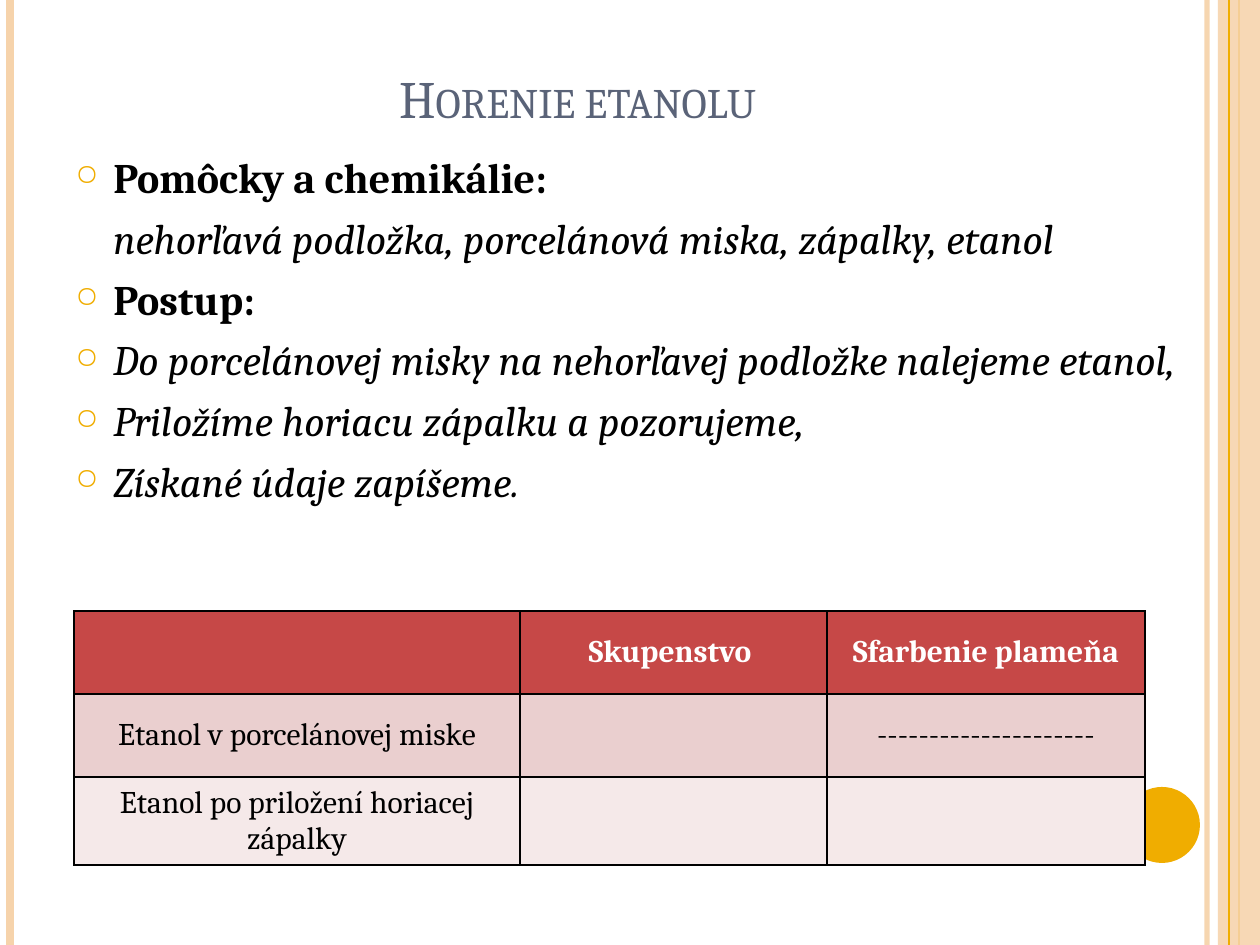
from lxml.etree import SubElement
from pptx import Presentation
from pptx.dml.color import RGBColor
from pptx.enum.shapes import MSO_CONNECTOR, MSO_SHAPE
from pptx.enum.text import MSO_ANCHOR, PP_ALIGN
from pptx.oxml.ns import qn
from pptx.util import Emu, Pt

PX_PER_INCH = 126
WIDTH, HEIGHT = 1260, 945
FONT = "Cambria"

PEACH = RGBColor(0xF6, 0xD3, 0xAB)
AMBER = RGBColor(0xF0, 0xAD, 0x00)
SLATE = RGBColor(0x5A, 0x63, 0x78)
BLACK = RGBColor(0x00, 0x00, 0x00)
WHITE = RGBColor(0xFF, 0xFF, 0xFF)
RED = RGBColor(0xC6, 0x48, 0x47)
ROSE = RGBColor(0xEA, 0xCF, 0xCF)
PALE_ROSE = RGBColor(0xF5, 0xE9, 0xE9)

# Text, bulleted, bold (otherwise italic)
INSTRUCTIONS = [
    ("Pomôcky a chemikálie:", True, True),
    ("nehorľavá podložka, porcelánová miska, zápalky, etanol", False, False),
    ("Postup:", True, True),
    ("Do porcelánovej misky na nehorľavej podložke nalejeme etanol,", True, False),
    ("Priložíme horiacu zápalku a pozorujeme,", True, False),
    ("Získané údaje zapíšeme.", True, False),
]
OBSERVATIONS = [
    ["", "Skupenstvo ", "Sfarbenie plameňa"],
    ["Etanol v porcelánovej miske", "", "---------------------"],
    ["Etanol po priložení horiacej zápalky", "", ""],
]
COLUMN_WIDTHS = [446, 307, 318]
ROW_HEIGHTS = [83, 83, 86]
ROW_FILLS = [RED, ROSE, PALE_ROSE]


def px(value):
    return Emu(round(value * 914400 / PX_PER_INCH))


def set_opacity(fill_parent, percent):
    color = fill_parent.find(qn("a:solidFill"))[0]
    SubElement(color, qn("a:alpha"), val=str(percent * 1000))


def add_stripe(slide, x, color, weight, opacity=100):
    """Draw a vertical line over the full height of the slide."""
    stripe = slide.shapes.add_connector(
        MSO_CONNECTOR.STRAIGHT, px(x), 0, px(x), px(HEIGHT))
    stripe.line.color.rgb = color
    stripe.line.width = Pt(weight)
    properties = stripe._element.spPr
    SubElement(properties, qn("a:effectLst"))
    if opacity < 100:
        set_opacity(properties.find(qn("a:ln")), opacity)


def add_plain_shape(slide, kind, left, top, width, height, color):
    shape = slide.shapes.add_shape(kind, px(left), px(top), px(width), px(height))
    shape.shadow.inherit = False
    shape.fill.solid()
    shape.fill.fore_color.rgb = color
    shape.line.fill.background()
    return shape


def add_text_frame(slide, left, top, width, height, anchor):
    box = slide.shapes.add_textbox(px(left), px(top), px(width), px(height))
    box.text_frame.word_wrap = True
    box.text_frame.vertical_anchor = anchor
    return box.text_frame


def style_font(paragraph, size, color, bold=False, italic=False):
    font = paragraph.font
    font.name = FONT
    font.size = Pt(size)
    font.color.rgb = color
    font.bold = bold
    font.italic = italic


def add_bullet(properties):
    color = SubElement(properties, qn("a:buClr"))
    SubElement(color, qn("a:srgbClr"), val=str(AMBER))
    SubElement(properties, qn("a:buSzPct"), val="70000")
    SubElement(properties, qn("a:buChar"), char="○")


def add_title(slide):
    frame = add_text_frame(slide, 63, 38, 1029, 97, MSO_ANCHOR.BOTTOM)
    paragraph = frame.paragraphs[0]
    paragraph.text = "Horenie etanolu"
    paragraph.alignment = PP_ALIGN.CENTER
    style_font(paragraph, 30, SLATE)
    paragraph._p.pPr.find(qn("a:defRPr")).set("cap", "small")


def add_instructions(slide):
    frame = add_text_frame(slide, 63, 145, 1133, 747, MSO_ANCHOR.TOP)
    for index, (text, bulleted, bold) in enumerate(INSTRUCTIONS):
        paragraph = frame.add_paragraph() if index else frame.paragraphs[0]
        paragraph.text = text
        paragraph.space_before = Pt(6)
        properties = paragraph._p.get_or_add_pPr()
        properties.set("marL", str(px(38)))
        properties.set("indent", str(px(-38) if bulleted else 0))
        if bulleted:
            add_bullet(properties)
        style_font(paragraph, 24, BLACK, bold=bold, italic=not bold)


def add_cell_borders(cell):
    properties = cell._tc.get_or_add_tcPr()
    for side in ("lnL", "lnR", "lnT", "lnB"):
        line = SubElement(properties, qn(f"a:{side}"), w=str(Pt(1)))
        fill = SubElement(line, qn("a:solidFill"))
        SubElement(fill, qn("a:srgbClr"), val=str(BLACK))


def fill_cell(cell, text, color, is_header):
    add_cell_borders(cell)
    cell.fill.solid()
    cell.fill.fore_color.rgb = color
    cell.vertical_anchor = MSO_ANCHOR.MIDDLE
    paragraph = cell.text_frame.paragraphs[0]
    paragraph.text = text
    paragraph.alignment = PP_ALIGN.CENTER
    style_font(paragraph, 18, WHITE if is_header else BLACK, bold=is_header)


def add_observation_table(slide):
    table = slide.shapes.add_table(
        len(ROW_HEIGHTS), len(COLUMN_WIDTHS), px(74), px(611),
        px(sum(COLUMN_WIDTHS)), px(sum(ROW_HEIGHTS))).table
    for column, width in zip(table.columns, COLUMN_WIDTHS):
        column.width = px(width)
    for index, (row, height) in enumerate(zip(table.rows, ROW_HEIGHTS)):
        row.height = px(height)
        for cell, text in zip(row.cells, OBSERVATIONS[index]):
            fill_cell(cell, text, ROW_FILLS[index], is_header=index == 0)


def add_decoration(slide):
    add_stripe(slide, 1207, PEACH, 3, opacity=93)
    add_stripe(slide, 10, PEACH, 4.5)
    add_stripe(slide, 1239, AMBER, 1.5)
    band = add_plain_shape(
        slide, MSO_SHAPE.RECTANGLE, 1218, 0, WIDTH - 1218, HEIGHT, PEACH)
    set_opacity(band._element.spPr, 87)
    add_stripe(slide, 1229, AMBER, 0.75)
    add_plain_shape(slide, MSO_SHAPE.OVAL, 1124, 787, 76, 76, AMBER)


def main():
    presentation = Presentation()
    presentation.slide_width = px(WIDTH)
    presentation.slide_height = px(HEIGHT)
    slide = presentation.slides.add_slide(presentation.slide_layouts[6])
    add_decoration(slide)
    add_title(slide)
    add_instructions(slide)
    add_observation_table(slide)
    presentation.save("out.pptx")


if __name__ == "__main__":
    main()
